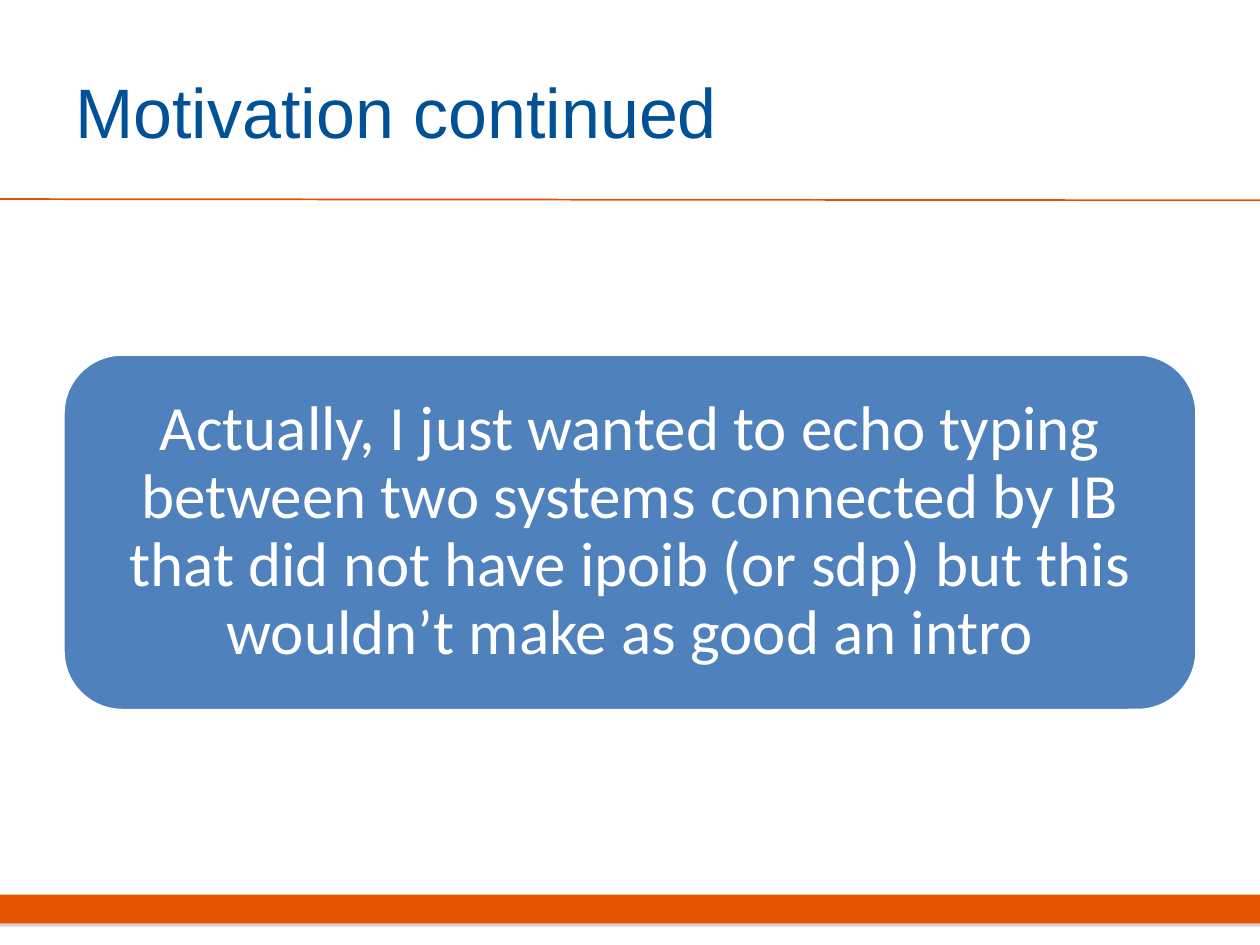
from dataclasses import dataclass

from lxml import etree
from pptx import Presentation
from pptx import util as u
from pptx.dml.color import RGBColor
from pptx.enum import shapes, text
from pptx.oxml import parse_xml
from pptx.oxml.ns import nsdecls, qn


@dataclass(frozen=True)
class Theme:
    accent: str = "E55302"
    title: str = "005195"
    panel: str = "4F81BD"
    light: str = "FFFFFF"
    shadow: str = "808080"
    title_font: str = "Arial"
    body_font: str = "Calibri"
    title_size: int = 40
    body_size: int = 36


THEME = Theme()
WIDTH, HEIGHT = 10, 7.5
MARGIN = WIDTH / 20
PANEL = (MARGIN, 2.81, WIDTH - 2 * MARGIN, 2.83)
PANEL_PAD = 0.14


def rgb(value):
    return RGBColor.from_string(value)


def inches(*values):
    return [u.Inches(v) for v in values]


def add_block(slide, kind, box, fill, outline=None, outline_width=1):
    sp = slide.shapes.add_shape(kind, *inches(*box))
    sp.shadow.inherit = False
    sp.fill.solid()
    sp.fill.fore_color.rgb = rgb(fill)
    if outline:
        sp.line.color.rgb = rgb(outline)
        sp.line.width = u.Pt(outline_width)
    else:
        sp.line.fill.background()
    return sp


def drop_shadow(sp, color, distance, opacity):
    """Cast a sharp shadow straight down; distance in points, opacity in percent."""
    effects = sp._element.spPr.find(qn("a:effectLst"))
    effects.append(parse_xml(
        f'<a:outerShdw {nsdecls("a")} dist="{u.Pt(distance)}" dir="5400000" rotWithShape="0">'
        f'<a:srgbClr val="{color}"><a:alpha val="{opacity * 1000}"/></a:srgbClr>'
        '</a:outerShdw>'))


def add_rule(slide, start, end, color, width):
    line = slide.shapes.add_connector(
        shapes.MSO_CONNECTOR.STRAIGHT, *inches(*start, *end))
    line.line.color.rgb = rgb(color)
    line.line.width = u.Pt(width)
    etree.SubElement(line._element.spPr, qn("a:effectLst"))


def add_text(slide, content, box, *, font, size, color,
             align=text.PP_ALIGN.LEFT, spacing=1.0, insets=(0.1, 0.05)):
    tf = slide.shapes.add_textbox(*inches(*box)).text_frame
    tf.word_wrap = True
    tf.vertical_anchor = text.MSO_ANCHOR.MIDDLE
    tf.margin_left = tf.margin_right = u.Inches(insets[0])
    tf.margin_top = tf.margin_bottom = u.Inches(insets[1])
    p = tf.paragraphs[0]
    p.alignment = align
    p.line_spacing = spacing
    r = p.add_run()
    r.text = content
    r.font.name = font
    r.font.size = u.Pt(size)
    r.font.color.rgb = rgb(color)


def inset_box(box, pad):
    left, top, width, height = box
    return left + pad, top + pad, width - 2 * pad, height - 2 * pad


def main():
    prs = Presentation()
    prs.slide_width, prs.slide_height = inches(WIDTH, HEIGHT)
    slide = prs.slides.add_slide(prs.slide_layouts[6])

    footer = add_block(slide, shapes.MSO_SHAPE.RECTANGLE,
                       (0, 7.1, WIDTH, 0.23), THEME.accent)
    drop_shadow(footer, THEME.shadow, distance=1.8, opacity=35)
    add_rule(slide, (0, 1.58), (WIDTH, 1.59), THEME.accent, 1)

    add_text(slide, "Motivation continued", (MARGIN, 0.25, 8.17, 1.25),
             font=THEME.title_font, size=THEME.title_size, color=THEME.title)

    add_block(slide, shapes.MSO_SHAPE.ROUNDED_RECTANGLE, PANEL,
              THEME.panel, THEME.light, 2)
    add_text(slide,
             "Actually, I just wanted to echo typing between two systems "
             "connected by IB that did not have ipoib (or sdp) but this "
             "wouldn’t make as good an intro",
             inset_box(PANEL, PANEL_PAD),
             font=THEME.body_font, size=THEME.body_size, color=THEME.light,
             align=text.PP_ALIGN.CENTER, spacing=0.9, insets=(0.15, 0.15))

    prs.save("out.pptx")


if __name__ == "__main__":
    main()
